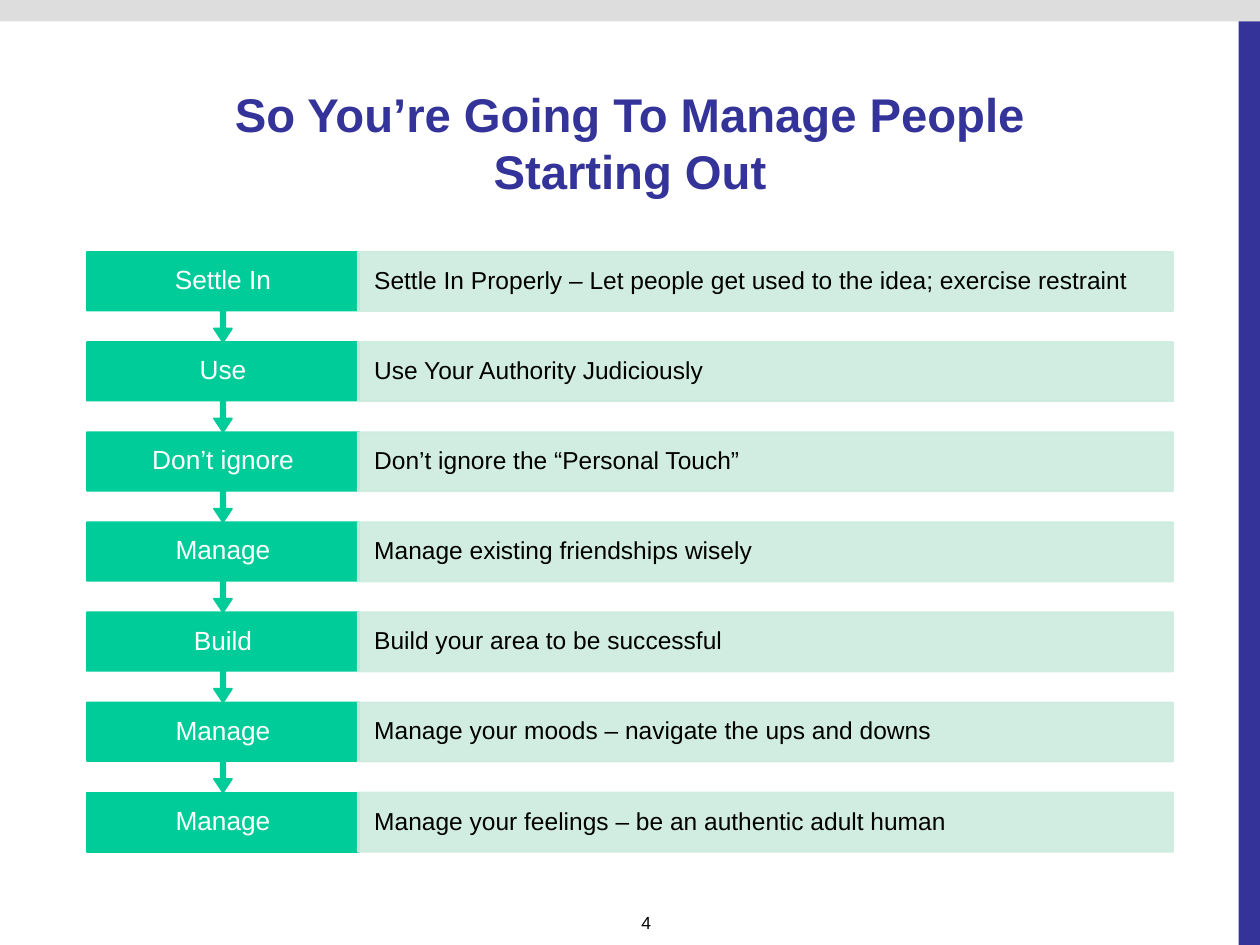
from copy import deepcopy
from dataclasses import dataclass

from lxml.etree import SubElement
from pptx import Presentation
from pptx.dml.color import RGBColor as Rgb
from pptx.enum.shapes import MSO_SHAPE as Geo
from pptx.enum.text import MSO_ANCHOR as Anchor, MSO_AUTO_SIZE as Auto, PP_ALIGN as Align
from pptx.oxml.ns import qn
from pptx.util import Inches, Pt


@dataclass(frozen=True)
class Theme:
    font: str = "Arial"
    navy: str = "333399"
    gray: str = "DDDDDD"
    green: str = "00CC99"
    mint: str = "CCECDE"
    white: str = "FFFFFF"
    black: str = "000000"
    title: int = 27
    label: int = 15
    body: int = 14
    small: int = 10


STEPS = [
    ("Settle In", "Settle In Properly – Let people get used to the idea; exercise restraint"),
    ("Use", "Use Your Authority Judiciously"),
    ("Don’t ignore", "Don’t ignore the “Personal Touch”"),
    ("Manage", "Manage existing friendships wisely"),
    ("Build", "Build your area to be successful"),
    ("Manage", "Manage your moods – navigate the ups and downs"),
    ("Manage", "Manage your feelings – be an authentic adult human"),
]

# Step grid, in inches
LEFT, TOP, PITCH = 0.69, 2, 0.715
LABEL_W, BODY_W, BAR_H = 2.16, 6.47, 0.47
BODY_X = 2.84


def put_text(shape, text, size, color, align=Align.LEFT, bold=False,
             anchor=Anchor.MIDDLE, pad=(0.09, 0.04), lead=None):
    """Fill a shape with one formatted paragraph; \\v breaks the line."""
    frame = shape.text_frame
    frame.word_wrap, frame.auto_size = True, Auto.NONE
    frame.vertical_anchor = anchor
    frame.margin_left = frame.margin_right = Inches(pad[0])
    frame.margin_top = frame.margin_bottom = Inches(pad[1])
    para = frame.paragraphs[0]
    para.text = text
    para.alignment = align
    if lead:
        para.line_spacing = lead
    for run in para.runs:
        font = run.font
        font.name, font.size, font.bold = Theme.font, Pt(size), bold
        font.color.rgb = Rgb.from_string(color)
    # Line breaks take the format of the text
    for stop in para._p.findall(qn("a:br")):
        stop.insert(0, deepcopy(para.runs[0]._r.rPr))


class Deck:
    def __init__(self, theme):
        self.theme = theme
        self.file = Presentation()
        self.file.slide_width, self.file.slide_height = Inches(10), Inches(7.5)
        self.slide = self.file.slides.add_slide(self.file.slide_layouts[5])

    def title(self, text, x, y, w, h):
        shape = self.slide.shapes.title
        shape.left, shape.top, shape.width, shape.height = map(Inches, (x, y, w, h))
        put_text(shape, text, self.theme.title, self.theme.navy, Align.CENTER, bold=True)

    def block(self, x, y, w, h, color, kind=Geo.RECTANGLE, edge=True, alpha=None):
        shape = self.slide.shapes.add_shape(kind, *map(Inches, (x, y, w, h)))
        shape.shadow.inherit = False
        shape.fill.solid()
        shape.fill.fore_color.rgb = Rgb.from_string(color)
        if edge:
            shape.line.color.rgb = Rgb.from_string(color)
            shape.line.width = Pt(1)
        else:
            shape.line.fill.background()
        if alpha:
            for tint in shape._element.spPr.iter(qn("a:srgbClr")):
                SubElement(tint, qn("a:alpha")).set("val", str(alpha * 1000))
        return shape

    def step(self, y, label, body, last):
        look = self.theme
        # Label box, with an arrow down to the next step
        if last:
            box = self.block(LEFT, y, LABEL_W, BAR_H, look.green)
        else:
            box = self.block(LEFT, y, LABEL_W, PITCH, look.green, Geo.DOWN_ARROW_CALLOUT)
            for i, value in enumerate((0.05, 0.1, 0.15, 0.65)):
                box.adjustments[i] = value
        put_text(box, label, look.label, look.white, Align.CENTER, pad=(0.15, 0), lead=0.9)
        # Explanation bar
        bar = self.block(BODY_X, y, BODY_W, BAR_H, look.mint, alpha=90)
        put_text(bar, body, look.body, look.black, pad=(0.13, 0), lead=0.9)

    def number(self, text, x, y, w, h):
        box = self.slide.shapes.add_textbox(*map(Inches, (x, y, w, h)))
        put_text(box, text, self.theme.small, self.theme.black, anchor=Anchor.TOP)


def main():
    look = Theme()
    deck = Deck(look)
    # Page frame
    deck.block(0, 0, 10, 0.17, look.gray, edge=False)
    deck.block(9.83, 0.17, 0.17, 7.33, look.navy, edge=False)
    deck.number("4", 5, 7.2, 0.5, 0.25)
    deck.title("So You’re Going To Manage People\vStarting Out", 0.69, 0.4, 8.62, 1.45)
    # Steps from the bottom up, so each arrow tip lies over the box below
    end = len(STEPS) - 1
    for i in range(end, -1, -1):
        deck.step(TOP + i * PITCH, *STEPS[i], last=i == end)
    deck.file.save("out.pptx")


if __name__ == "__main__":
    main()
